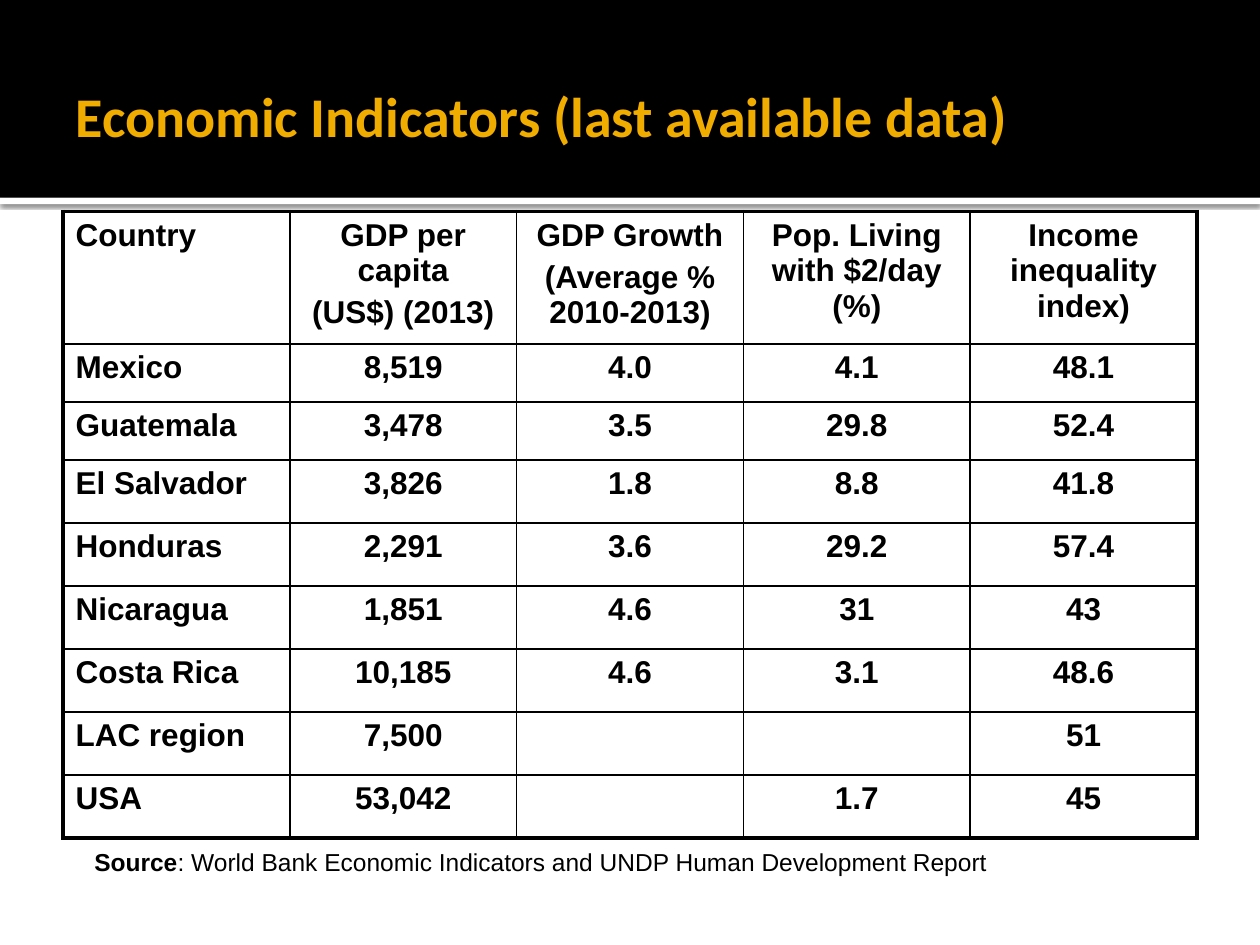
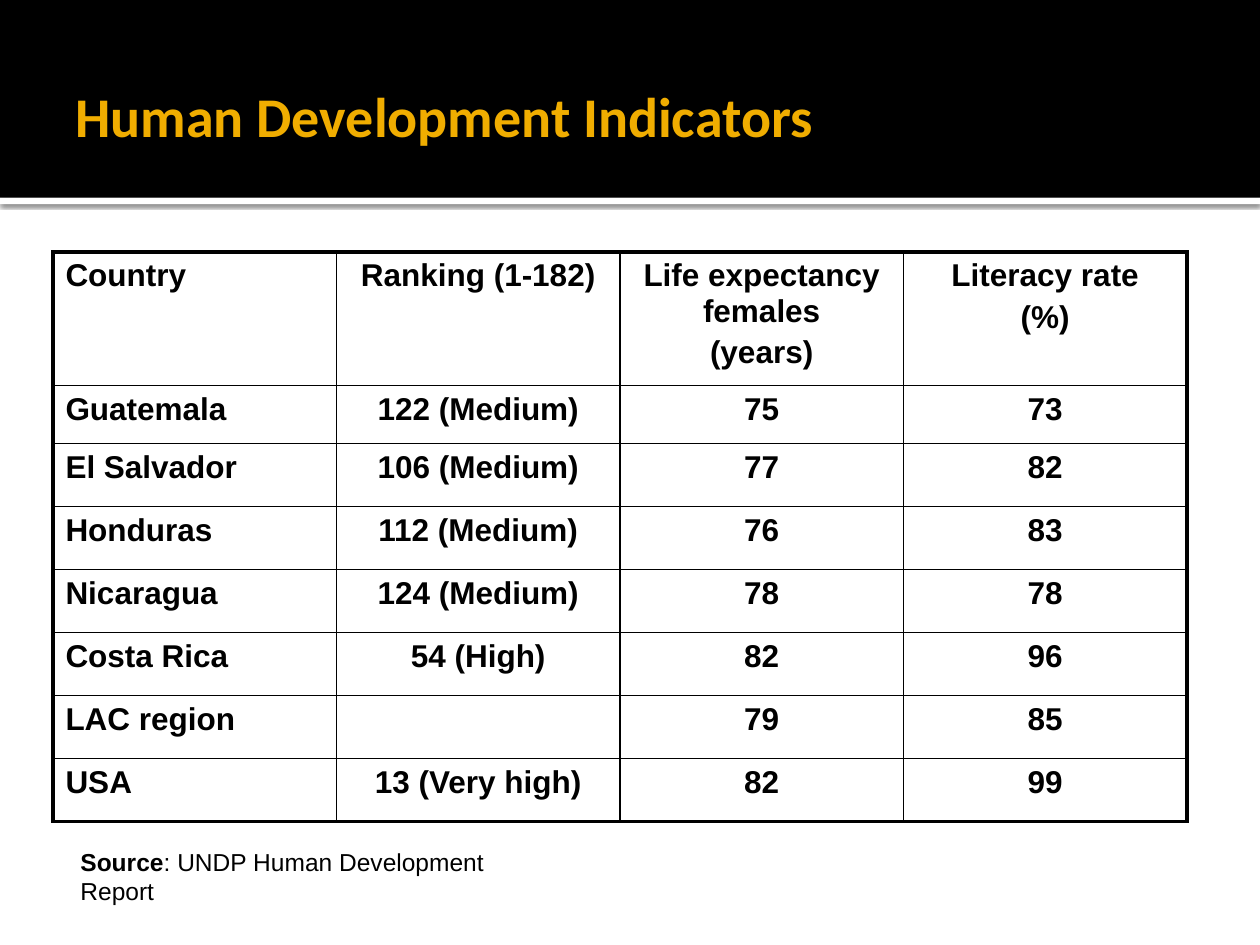
from dataclasses import dataclass
from typing import Any, NamedTuple

from lxml.etree import SubElement
from pptx import Presentation
from pptx.dml.color import RGBColor
from pptx.enum.shapes import MSO_SHAPE
from pptx.enum.text import MSO_ANCHOR, PP_ALIGN
from pptx.oxml.ns import qn
from pptx.util import Emu, Pt

SCALE = 9144  # EMU in one px, at 100 px to the inch


@dataclass(frozen=True)
class Theme:
    black: str = "000000"
    white: str = "FFFFFF"
    gold: str = "F0AD00"
    head: str = "Calibri"
    body: str = "Arial"
    title: float = 32
    cell: float = 18
    note: float = 14
    gap: float = 3.6
    thin: float = 1
    thick: float = 2.25


class Box(NamedTuple):
    left: int
    top: int
    width: int
    height: int


class Page(NamedTuple):
    title: str
    grid: Box
    tall: list[int]
    rows: list[tuple[str, ...]]
    note: Box
    source: str


THEME = Theme()
WIDE, HIGH = 1000, 750
BAND = Box(0, 0, WIDE, 157)
STRIP = Box(0, 157, WIDE, 5)
TITLE = Box(50, 50, 900, 83)

PAGES = [
    Page(
        "Economic Indicators (last available data)",
        Box(50, 168, 900, 479),
        [87] + [46] * 2 + [50] * 6,
        [
            ("Country", "GDP per capita\n(US$) (2013)",
             "GDP Growth\n(Average % 2010-2013)",
             "Pop. Living with $2/day (%)", "Income inequality index)"),
            ("Mexico", "8,519", "4.0", "4.1", "48.1"),
            ("Guatemala", "3,478", "3.5", "29.8", "52.4"),
            ("El Salvador", "3,826", "1.8", "8.8", "41.8"),
            ("Honduras", "2,291", "3.6", "29.2", "57.4"),
            ("Nicaragua", "1,851", "4.6", "31", "43"),
            ("Costa Rica", "10,185", "4.6", "3.1", "48.6"),
            ("LAC region", "7,500", "", "", "51"),
            ("USA", "53,042", "", "1.7", "45"),
        ],
        Box(65, 667, 733, 34),
        "World Bank Economic Indicators and UNDP Human Development Report",
    ),
    Page(
        "Human Development Indicators",
        Box(42, 200, 900, 452),
        [106, 46] + [50] * 6,
        [
            ("Country", "Ranking (1-182)",
             "Life expectancy females\n(years)", "Literacy rate\n(%)"),
            ("Guatemala", "122 (Medium)", "75", "73"),
            ("El Salvador", "106 (Medium)", "77", "82"),
            ("Honduras", "112 (Medium)", "76", "83"),
            ("Nicaragua", "124 (Medium)", "78", "78"),
            ("Costa Rica", "54 (High)", "82", "96"),
            ("LAC region", "", "79", "85"),
            ("USA", "13 (Very high)", "82", "99"),
        ],
        Box(54, 667, 403, 33),
        "UNDP Human Development Report",
    ),
]


def px(size: int) -> Emu:
    return Emu(size * SCALE)


def place(box: Box) -> list[Emu]:
    return [px(side) for side in box]


def put(thing: Any, form: dict[str, Any]) -> None:
    for name, value in form.items():
        setattr(thing, name, value)


def write(para: Any, text: str, size: float, bold: bool = True,
          face: str = THEME.body, tint: str = THEME.black) -> None:
    run = para.add_run()
    run.text = text
    put(run.font, {"name": face, "size": Pt(size), "bold": bold})
    run.font.color.rgb = RGBColor.from_string(tint)


def block(slide: Any, box: Box, tint: str) -> Any:
    shape = slide.shapes.add_shape(MSO_SHAPE.RECTANGLE, *place(box))
    shape.fill.solid()
    shape.fill.fore_color.rgb = RGBColor.from_string(tint)
    shape.line.fill.background()
    shape.shadow.inherit = False
    return shape


def shade(shape: Any) -> None:
    """Give the shape a soft shadow straight below it."""
    effects = shape.element.spPr.find(qn("a:effectLst"))
    cast = SubElement(effects, qn("a:outerShdw"), blurRad=str(Pt(2.5)),
                      dist=str(Pt(0.8)), dir="5400000", rotWithShape="0")
    color = SubElement(cast, qn("a:srgbClr"), val=THEME.black)
    SubElement(color, qn("a:alpha"), val="60000")


def label(slide: Any, box: Box, form: dict[str, Any]) -> Any:
    """Add a wrapping text box and return its first paragraph."""
    frame = slide.shapes.add_textbox(*place(box)).text_frame
    put(frame, {"word_wrap": True, **form})
    return frame.paragraphs[0]


def edge(cell: Any, side: str, outer: bool) -> None:
    width = Pt(THEME.thick if outer else THEME.thin)
    line = SubElement(cell._tc.get_or_add_tcPr(), qn(f"a:ln{side}"), w=str(width))
    fill = SubElement(line, qn("a:solidFill"))
    SubElement(fill, qn("a:srgbClr"), val=THEME.black)


def fill(cell: Any, text: str, align: PP_ALIGN) -> None:
    frame = cell.text_frame
    for i, part in enumerate(text.split("\n")):
        para = frame.add_paragraph() if i else frame.paragraphs[0]
        put(para, {"alignment": align, "space_before": Pt(THEME.gap if i else 0)})
        if part:
            write(para, part, THEME.cell)


def grid(slide: Any, page: Page) -> None:
    rows, cols = len(page.rows), len(page.rows[0])
    table = slide.shapes.add_table(rows, cols, *place(page.grid)).table
    put(table, {"first_row": False, "horz_banding": False})
    for col in table.columns:
        col.width = px(page.grid.width // cols)
    for r, (texts, tall) in enumerate(zip(page.rows, page.tall)):
        table.rows[r].height = px(tall)
        for c, text in enumerate(texts):
            cell = table.cell(r, c)
            fill(cell, text, PP_ALIGN.CENTER if c else PP_ALIGN.LEFT)
            sides = {"L": c == 0, "R": c == cols - 1,
                     "T": r == 0, "B": r == rows - 1}
            for side, outer in sides.items():
                edge(cell, side, outer)
            cell.fill.background()


def draw(slide: Any, page: Page) -> None:
    shade(block(slide, STRIP, THEME.white))
    block(slide, BAND, THEME.black)
    head = label(slide, TITLE, {"vertical_anchor": MSO_ANCHOR.MIDDLE,
                                "margin_right": px(5)})
    write(head, page.title, THEME.title, face=THEME.head, tint=THEME.gold)
    grid(slide, page)
    note = label(slide, page.note, {})
    write(note, "Source", THEME.note)
    write(note, f": {page.source}", THEME.note, bold=False)


def main() -> None:
    deck = Presentation()
    put(deck, {"slide_width": px(WIDE), "slide_height": px(HIGH)})
    for page in PAGES:
        draw(deck.slides.add_slide(deck.slide_layouts[6]), page)
    deck.save("out.pptx")


if __name__ == "__main__":
    main()
